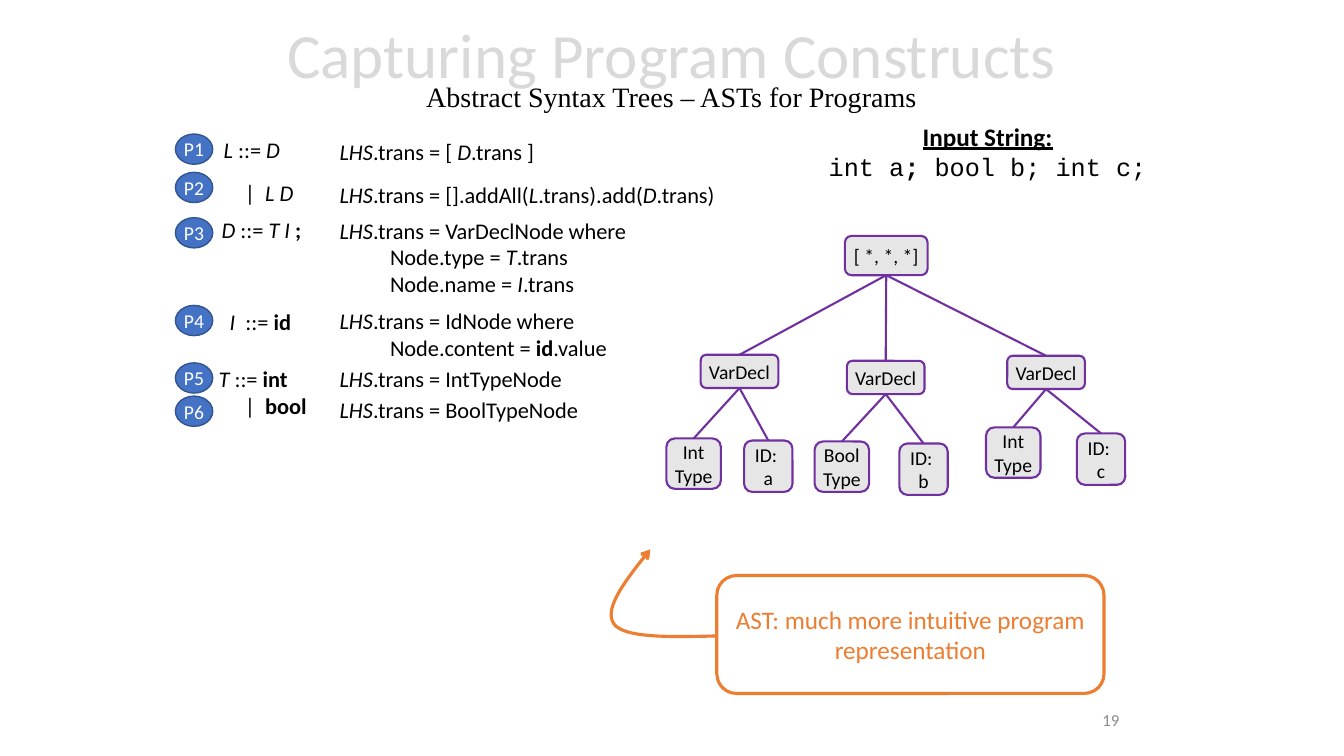
from lxml.etree import SubElement
from pptx import Presentation
from pptx.dml.color import RGBColor
from pptx.enum.shapes import MSO_CONNECTOR, MSO_SHAPE
from pptx.enum.text import MSO_ANCHOR, MSO_AUTO_SIZE, PP_ALIGN
from pptx.oxml.ns import qn
from pptx.util import Pt

PX = 9144
BLACK = RGBColor(0x00, 0x00, 0x00)
WHITE = RGBColor(0xFF, 0xFF, 0xFF)
TITLE_GRAY = RGBColor(0xD9, 0xD9, 0xD9)
NUMBER_GRAY = RGBColor(0x8C, 0x8C, 0x8C)
NODE_GRAY = RGBColor(0xE7, 0xE6, 0xE6)
PURPLE = RGBColor(0x70, 0x30, 0xA0)
BLUE = RGBColor(0x44, 0x72, 0xC4)
DARK_BLUE = RGBColor(0x32, 0x54, 0x91)
ORANGE = RGBColor(0xED, 0x7D, 0x31)

presentation = Presentation()
presentation.slide_width = 1333 * PX
presentation.slide_height = 750 * PX
slide = presentation.slides.add_slide(presentation.slide_layouts[5])
shapes = slide.shapes


def write(shape, paragraphs, size, color=BLACK, align=PP_ALIGN.LEFT, spacing=None, indent=0):
    frame = shape.text_frame
    frame.word_wrap = True
    for index, runs in enumerate(paragraphs):
        paragraph = frame.add_paragraph() if index else frame.paragraphs[0]
        paragraph.alignment = align
        if spacing:
            paragraph.line_spacing = spacing
        if index and indent:
            paragraph._p.get_or_add_pPr().set("marL", str(indent * PX))
        for text, style in runs:
            run = paragraph.add_run()
            run.text = text
            font = run.font
            font.name = "Courier New" if "c" in style else "Calibri"
            font.size = Pt(size)
            font.color.rgb = color
            font.bold = "b" in style
            font.italic = "i" in style
            font.underline = "u" in style
    return frame


def add_box(kind, box, fill, line, line_width, lines, size, color, insets):
    shape = shapes.add_shape(kind, *[value * PX for value in box])
    shape.shadow.inherit = False
    shape.fill.solid()
    shape.fill.fore_color.rgb = fill
    shape.line.color.rgb = line
    shape.line.width = Pt(line_width)
    frame = write(shape, [[(text, "")] for text in lines], size, color, PP_ALIGN.CENTER)
    frame.vertical_anchor = MSO_ANCHOR.MIDDLE
    frame.margin_left = frame.margin_right = insets[0] * PX
    frame.margin_top = frame.margin_bottom = insets[1] * PX
    return shape


title = shapes.title
title.left, title.top, title.width, title.height = [value * PX for value in (235, 1, 862, 145)]
title_frame = title.text_frame
title_frame.auto_size = MSO_AUTO_SIZE.NONE
title_frame.vertical_anchor = MSO_ANCHOR.MIDDLE
title_paragraph = title_frame.paragraphs[0]
title_paragraph.alignment = PP_ALIGN.CENTER
title_paragraph.line_spacing = 0.7
for text, name, size, color in (
    ("Capturing Program Constructs", "Calibri", 45, TITLE_GRAY),
    ("Abstract Syntax Trees – ASTs for Programs", "Times New Roman", 20, BLACK),
):
    if title_paragraph.runs:
        title_paragraph.add_line_break()
    run = title_paragraph.add_run()
    run.text = text
    run.font.name = name
    run.font.size = Pt(size)
    run.font.color.rgb = color

page_number = shapes.add_textbox(887 * PX, 694 * PX, 233 * PX, 40 * PX)
write(page_number, [[("19", "")]], 12, NUMBER_GRAY, PP_ALIGN.RIGHT).vertical_anchor = MSO_ANCHOR.MIDDLE

input_string = shapes.add_textbox(806 * PX, 115 * PX, 347 * PX, 71 * PX)
write(
    input_string,
    [[("Input String:", "bu")], [("int a", "c"), (";", "cb"), (" bool b; int c;", "c")]],
    18,
    align=PP_ALIGN.CENTER,
)

LHS = ("LHS", "i")
grammar_texts = [
    ((212, 121, 110, 43), Pt(26), 0, [[("L", "i"), (" ::= ", ""), ("D", "i")]]),
    ((233, 163, 90, 43), Pt(26), 0, [[("|  ", ""), ("L D", "i")]]),
    ((210, 210, 115, 37), None, 0, [[("D", "i"), (" ::= ", ""), ("T I", "i"), (" ;", "b")]]),
    ((218, 301, 110, 37), None, 0, [[("I  ", "i"), ("::= ", ""), ("id", "b")]]),
    ((207, 357, 120, 64), None, 26, [[("T ", "i"), ("::= ", ""), ("int", "b")], [("|  ", ""), ("bool", "b")]]),
    ((327, 123, 410, 43), Pt(26), 0, [[LHS, (".trans = [ ", ""), ("D", "i"), (".trans ]", "")]]),
    ((327, 165, 410, 43), Pt(26), 0, [[
        LHS, (".trans = [].addAll(", ""), ("L", "i"), (".trans).add(", ""), ("D", "i"), (".trans)", ""),
    ]]),
    ((327, 210, 320, 91), None, 50, [
        [LHS, (".trans = VarDeclNode where", "")],
        [("Node.type = ", ""), ("T", "i"), (".trans", "")],
        [("Node.name = ", ""), ("I", "i"), (".trans", "")],
    ]),
    ((327, 300, 320, 64), None, 50, [
        [LHS, (".trans = IdNode where", "")],
        [("Node.content = ", ""), ("id", "b"), (".value", "")],
    ]),
    ((327, 357, 320, 37), None, 0, [[LHS, (".trans = IntTypeNode", "")]]),
    ((327, 388, 320, 37), None, 0, [[LHS, (".trans = BoolTypeNode", "")]]),
]
for box, spacing, indent, paragraphs in grammar_texts:
    text_box = shapes.add_textbox(*[value * PX for value in box])
    write(text_box, paragraphs, 16, spacing=spacing, indent=indent)

for number, top in enumerate((133, 171, 216, 303, 360, 393), 1):
    add_box(MSO_SHAPE.OVAL, (174, top, 37, 30), BLUE, DARK_BLUE, 1, [f"P{number}"], 14, WHITE, (0, 0))

tree_nodes = [
    (None, (838, 234, 82, 39), ["[ *, *, *]"]),
    (0, (695, 352, 77, 33), ["VarDecl"]),
    (0, (840, 358, 77, 33), ["VarDecl"]),
    (0, (999, 353, 77, 33), ["VarDecl"]),
    (1, (661, 435, 54, 50), ["Int", "Type"]),
    (1, (738, 437, 48, 51), ["ID: ", "a"]),
    (2, (808, 438, 54, 50), ["Bool", "Type"]),
    (2, (892, 440, 48, 51), ["ID: ", "b"]),
    (3, (978, 424, 54, 50), ["Int", "Type"]),
    (3, (1068, 430, 48, 51), ["ID: ", "c"]),
]
node_shapes = []
for parent, box, lines in tree_nodes:
    node = add_box(MSO_SHAPE.ROUNDED_RECTANGLE, box, NODE_GRAY, PURPLE, 1.5, lines, 14, BLACK, (5, 0))
    node_shapes.append(node)
    if parent is not None:
        branch = shapes.add_connector(MSO_CONNECTOR.STRAIGHT, 0, 0, 0, 0)
        branch.begin_connect(node_shapes[parent], 2)
        branch.end_connect(node, 0)
        branch.line.color.rgb = PURPLE
        branch.line.width = Pt(1.5)
        SubElement(branch._element.spPr, qn("a:effectLst"))

add_box(
    MSO_SHAPE.ROUNDED_RECTANGLE, (711, 571, 384, 117), WHITE, ORANGE, 2.25,
    ["AST: much more intuitive program representation"], 18, ORANGE, (10, 5),
)

curves = [
    ((709, 631), (664, 632), (619, 633), (609, 619)),
    ((609, 619), (598, 604), (621, 575), (645, 545)),
]
STEPS = 16
points = []
for curve in curves:
    for step in range(1, STEPS + 1):
        t = step / STEPS
        weights = ((1 - t) ** 3, 3 * t * (1 - t) ** 2, 3 * t * t * (1 - t), t ** 3)
        points.append(tuple(
            round(PX * sum(weight * point[axis] for weight, point in zip(weights, curve)))
            for axis in (0, 1)
        ))
builder = shapes.build_freeform(709 * PX, 631 * PX)
builder.add_line_segments(points, close=False)
arrow = builder.convert_to_shape()
arrow.shadow.inherit = False
arrow.fill.background()
arrow.line.color.rgb = ORANGE
arrow.line.width = Pt(2.25)
SubElement(arrow.line._get_or_add_ln(), qn("a:tailEnd"), type="arrow")

presentation.save("out.pptx")
